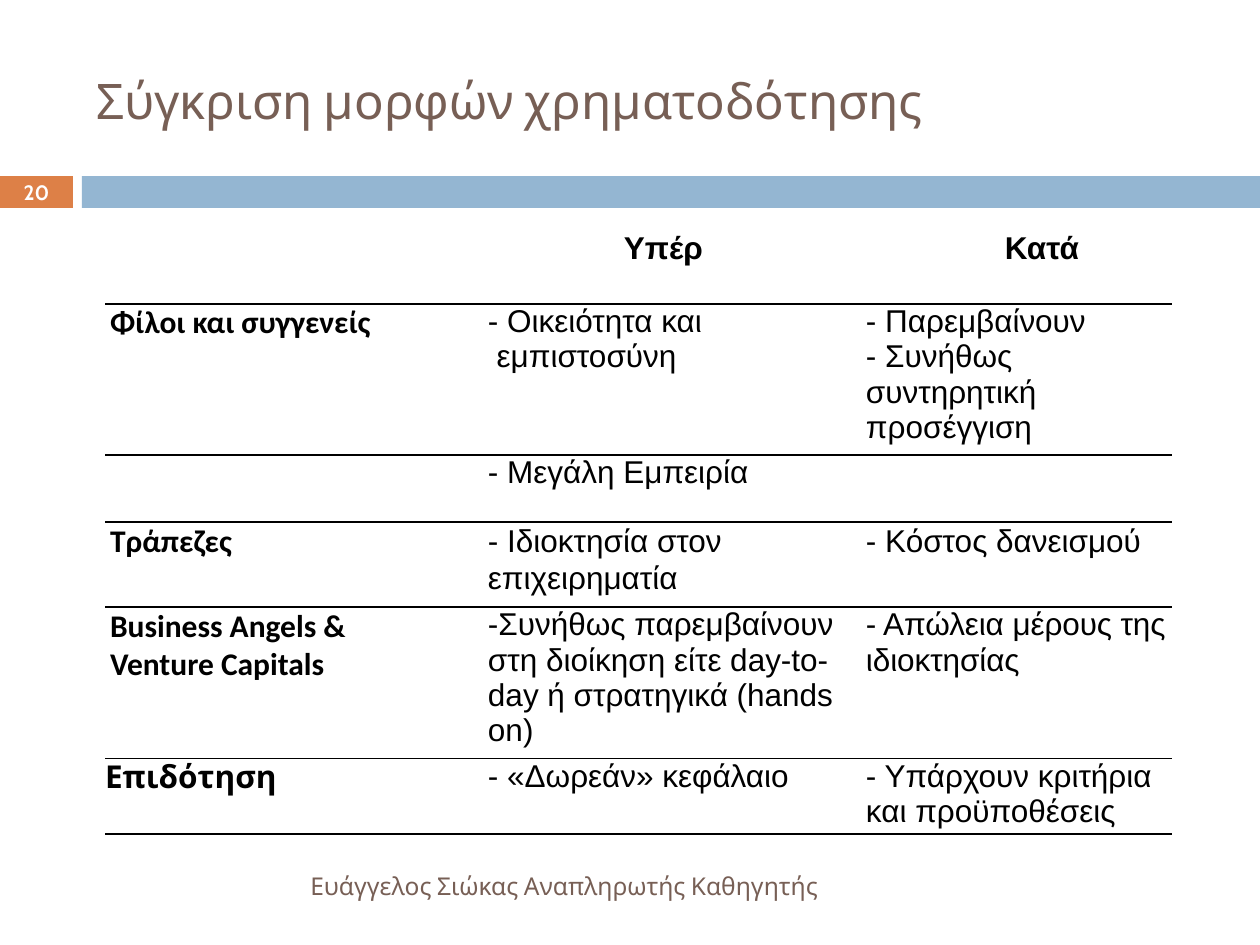
from lxml.etree import SubElement
from pptx import Presentation
from pptx.dml.color import RGBColor
from pptx.enum.shapes import MSO_SHAPE as SHAPE
from pptx.enum.text import MSO_ANCHOR as ANCHOR, PP_ALIGN as ALIGN
from pptx.oxml.ns import qn
from pptx.util import Pt

PX = 914400 / 126
COLORS = {"brown": "775F55", "orange": "DD8047", "blue": "94B6D2",
          "black": "000000", "white": "FFFFFF"}
NO_STYLE = "{2D5ABB26-0587-4C30-8999-92F81FD0307C}"

TITLE = "Σύγκριση μορφών χρηματοδότησης"
FOOTER = "Ευάγγελος Σιώκας Αναπληρωτής Καθηγητής"
NUMBER = "20"

# Each cell is a list of paragraphs
ROWS = [
    ([], ["Υπέρ"], ["Κατά"]),
    (["Φίλοι και συγγενείς"],
     ["- Οικειότητα και", " εμπιστοσύνη"],
     ["- Παρεμβαίνουν", "- Συνήθως συντηρητική προσέγγιση"]),
    ([], ["- Μεγάλη Εμπειρία"], []),
    (["Τράπεζες"],
     ["- Ιδιοκτησία στον επιχειρηματία"],
     ["- Κόστος δανεισμού"]),
    (["Business Angels &", "Venture Capitals"],
     ["-Συνήθως παρεμβαίνουν στη διοίκηση είτε day-to-day ή στρατηγικά (hands on)"],
     ["- Απώλεια μέρους της ιδιοκτησίας"]),
    (["Επιδότηση"],
     ["- «Δωρεάν» κεφάλαιο"],
     ["- Υπάρχουν κριτήρια και προϋποθέσεις"]),
    ([], [], []),
]
COL_WIDTHS = [325, 406, 336]
ROW_HEIGHTS = [73, 141, 67, 85, 141, 74, 65]
HEADER_INDENTS = [0, 194, 169]
BODY_INDENTS = [5, 58, 30]
GRANT_ROW = 5
LINE_SPACING = {(3, 1): 21, (3, 2): 21.3}
TIGHT_CELL = (4, 2)
RULES_BELOW = {0, 1, 3, 4, 5}


def emu(px):
    return round(px * PX)


def box(*lengths):
    return [emu(n) for n in lengths]


def color(name):
    return RGBColor.from_string(COLORS[name])


def add_run(p, text, font, size, tone, bold=False):
    r = p.add_run()
    r.text = text
    r.font.name, r.font.size, r.font.bold = font, Pt(size), bold
    r.font.color.rgb = color(tone)
    return r


def add_bar(s, bounds, tone):
    bar = s.shapes.add_shape(SHAPE.RECTANGLE, *box(*bounds))
    bar.shadow.inherit = False
    bar.fill.solid()
    bar.fill.fore_color.rgb = color(tone)
    bar.line.fill.background()


def add_label(s, bounds, text, size, tone, align, bold=False, inset=0):
    tf = s.shapes.add_textbox(*box(*bounds)).text_frame
    tf.word_wrap = True
    tf.vertical_anchor = ANCHOR.MIDDLE
    tf.margin_left = tf.margin_right = emu(inset)
    tf.margin_top = tf.margin_bottom = 0
    tf.paragraphs[0].alignment = align
    add_run(tf.paragraphs[0], text, "Cabin", size, tone, bold)


def add_rule(cell, side):
    ln = SubElement(cell._tc.get_or_add_tcPr(), qn(f"a:{side}"), w=str(Pt(1)))
    fill = SubElement(ln, qn("a:solidFill"))
    SubElement(fill, qn("a:srgbClr"), val=COLORS["black"])


def cell_font(row, col):
    if row == 0 or col > 0:
        return "Arial"
    return "Cabin" if row == GRANT_ROW else "Calibri"


def fill_cell(cell, row, col, texts):
    cell.margin_left = cell.margin_right = cell.margin_top = cell.margin_bottom = 0
    if row - 1 in RULES_BELOW:
        add_rule(cell, "lnT")
    if row in RULES_BELOW:
        add_rule(cell, "lnB")
    cell.fill.background()
    indent = HEADER_INDENTS[col] if row == 0 else BODY_INDENTS[col]
    if row == GRANT_ROW and col == 0:
        indent = 0
    tf = cell.text_frame
    for i, text in enumerate(texts):
        p = tf.add_paragraph() if i else tf.paragraphs[0]
        pPr = p._p.get_or_add_pPr()
        pPr.set("marL", str(emu(indent)))
        pPr.set("indent", "0")
        if (row, col) in LINE_SPACING:
            p.line_spacing = Pt(LINE_SPACING[row, col])
        r = add_run(p, text, cell_font(row, col), 18, "black", row == 0 or col == 0)
        if (row, col) == TIGHT_CELL:
            r.font._element.set("spc", "-5")


def add_comparison(s):
    frame = s.shapes.add_table(len(ROWS), len(COL_WIDTHS),
                               *box(105, 231, sum(COL_WIDTHS), sum(ROW_HEIGHTS)))
    table = frame.table
    table.first_row = table.horz_banding = False
    table._tbl.tblPr.find(qn("a:tableStyleId")).text = NO_STYLE
    for column, width in zip(table.columns, COL_WIDTHS):
        column.width = emu(width)
    for i, (height, texts) in enumerate(zip(ROW_HEIGHTS, ROWS)):
        table.rows[i].height = emu(height)
        for j, paragraphs in enumerate(texts):
            fill_cell(table.cell(i, j), i, j, paragraphs)


def main():
    prs = Presentation()
    prs.slide_width, prs.slide_height = box(1260, 945)
    s = prs.slides.add_slide(prs.slide_layouts[5])

    add_bar(s, (0, 176, 73, 32), "orange")
    add_bar(s, (82, 176, 1178, 32), "blue")

    title = s.shapes.title
    title.left, title.top, title.width, title.height = box(84, 32, 1124, 136)
    tf = title.text_frame
    tf.vertical_anchor = ANCHOR.MIDDLE
    tf.paragraphs[0].alignment = ALIGN.LEFT
    add_run(tf.paragraphs[0], TITLE, "Cabin", 28, "brown")

    add_label(s, (84, 861, 747, 50), FOOTER, 14, "brown", ALIGN.RIGHT, inset=13)
    add_label(s, (0, 175, 73, 34), NUMBER, 11.9, "white", ALIGN.CENTER, bold=True)
    add_comparison(s)
    prs.save("out.pptx")


if __name__ == "__main__":
    main()
